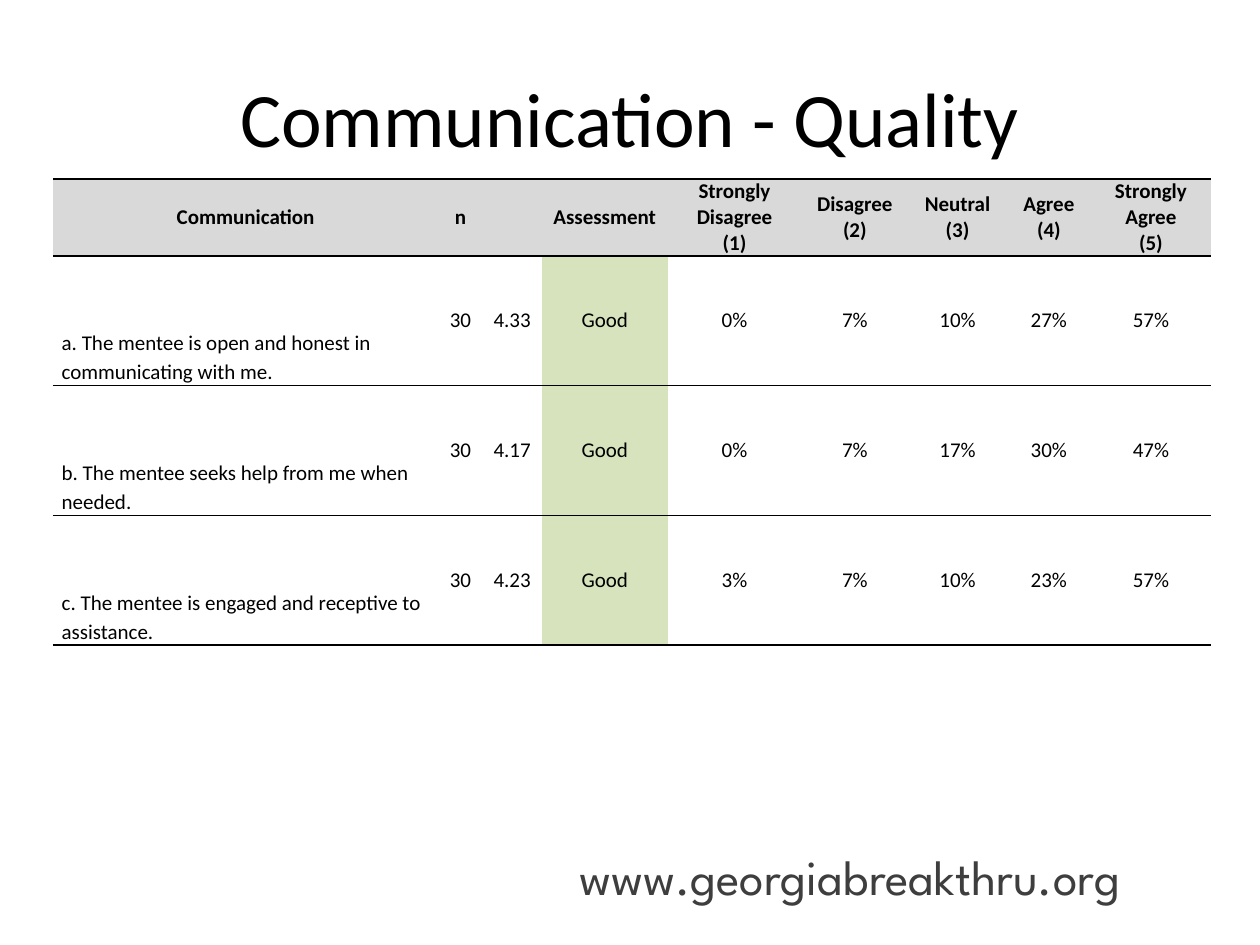
from dataclasses import dataclass

from lxml import etree
from pptx import Presentation
from pptx import util as u
from pptx.dml.color import RGBColor
from pptx.enum import text
from pptx.oxml import ns
from pptx.slide import Slide
from pptx.table import Table, _Cell
from pptx.text.text import TextFrame

BLACK = RGBColor(0x00, 0x00, 0x00)
WEB_GREY = RGBColor(0x3E, 0x3E, 0x3E)
HEADER_GREY = RGBColor(0xD9, 0xD9, 0xD9)
GOOD_GREEN = RGBColor(0xD6, 0xE3, 0xBC)
ASSESSMENT_COLUMN = 3


@dataclass(frozen=True)
class Column:
    heading: str
    width: float


@dataclass(frozen=True)
class Statement:
    wording: str
    count: int
    mean: float
    rating: str
    shares: tuple[int, ...]

    def values(self) -> list[str]:
        percentages = [f"{share}%" for share in self.shares]
        return [self.wording, str(self.count), f"{self.mean:.2f}", self.rating, *percentages]


COLUMNS = [
    Column("Communication", 3.06),
    Column("n", 0.35),
    Column("", 0.47),
    Column("Assessment", 1),
    Column("Strongly Disagree\n(1)", 1.06),
    Column("Disagree (2)", 0.85),
    Column("Neutral (3)", 0.78),
    Column("Agree (4)", 0.67),
    Column("Strongly Agree\n(5)", 0.95),
]
STATEMENTS = [
    Statement("a. The mentee is open and honest in communicating with me.",
              30, 4.33, "Good", (0, 7, 10, 27, 57)),
    Statement("b. The mentee seeks help from me when needed.",
              30, 4.17, "Good", (0, 7, 17, 30, 47)),
    Statement("c. The mentee is engaged and receptive to assistance.",
              30, 4.23, "Good", (3, 7, 10, 23, 57)),
]
HEADER_HEIGHT = 0.44
ROW_HEIGHT = 1.03


def write_text(frame: TextFrame, wording: str, *, size: float = 12, font: str = "Calibri",
               color: RGBColor = BLACK, bold: bool = False,
               align: text.PP_ALIGN = text.PP_ALIGN.CENTER,
               line_spacing: float = 1.0) -> None:
    for index, line in enumerate(wording.split("\n")):
        para = frame.add_paragraph() if index else frame.paragraphs[0]
        para.alignment = align
        para.line_spacing = line_spacing
        span = para.add_run()
        span.text = line
        span.font.size = u.Pt(size)
        span.font.name = font
        span.font.bold = bold
        span.font.color.rgb = color


def rule_cell(cell: _Cell) -> None:
    properties = cell._tc.get_or_add_tcPr()
    for side in ("lnL", "lnR"):
        line = etree.SubElement(properties, ns.qn(f"a:{side}"), w="0")
        etree.SubElement(line, ns.qn("a:noFill"))
    for side in ("lnT", "lnB"):
        line = etree.SubElement(properties, ns.qn(f"a:{side}"), w=str(u.Pt(1)))
        fill = etree.SubElement(line, ns.qn("a:solidFill"))
        etree.SubElement(fill, ns.qn("a:srgbClr"), val=str(BLACK))


def fill_cell(cell: _Cell, color: RGBColor | None) -> None:
    if color is None:
        cell.fill.background()
    else:
        cell.fill.solid()
        cell.fill.fore_color.rgb = color


def draw_row(table: Table, row: int, values: list[str]) -> None:
    is_header = row == 0
    for column, value in enumerate(values):
        cell = table.cell(row, column)
        is_wording = column == 0 and not is_header
        cell.margin_left = cell.margin_right = u.Inches(0.07)
        cell.margin_top = cell.margin_bottom = 0
        cell.vertical_anchor = text.MSO_ANCHOR.BOTTOM if is_wording else text.MSO_ANCHOR.MIDDLE
        rule_cell(cell)
        body_fill = GOOD_GREEN if column == ASSESSMENT_COLUMN else None
        fill_cell(cell, HEADER_GREY if is_header else body_fill)
        if value:
            write_text(cell.text_frame, value, bold=is_header,
                       align=text.PP_ALIGN.LEFT if is_wording else text.PP_ALIGN.CENTER,
                       line_spacing=1.15 if is_wording else 1.0)


def draw_table(page: Slide) -> None:
    width = sum(column.width for column in COLUMNS)
    height = HEADER_HEIGHT + ROW_HEIGHT * len(STATEMENTS)
    table = page.shapes.add_table(
        len(STATEMENTS) + 1, len(COLUMNS),
        u.Inches(0.42), u.Inches(1.42), u.Inches(width), u.Inches(height)).table
    table.first_row = table.horz_banding = False
    for index, column in enumerate(COLUMNS):
        table.columns[index].width = u.Inches(column.width)
    contents = [[column.heading for column in COLUMNS], *(s.values() for s in STATEMENTS)]
    for index, values in enumerate(contents):
        table.rows[index].height = u.Inches(ROW_HEIGHT if index else HEADER_HEIGHT)
        draw_row(table, index, values)


def main() -> None:
    deck = Presentation()
    deck.slide_width, deck.slide_height = u.Inches(10), u.Inches(7.5)
    page = deck.slides.add_slide(deck.slide_layouts[5])

    title = page.shapes.title
    title.left, title.top = u.Inches(0.5), u.Inches(0.3)
    title.width, title.height = u.Inches(9), u.Inches(1.25)
    title.text_frame.vertical_anchor = text.MSO_ANCHOR.MIDDLE
    write_text(title.text_frame, "Communication - Quality", size=44)

    draw_table(page)

    box = page.shapes.add_textbox(u.Inches(4.5), u.Inches(6.67), u.Inches(5.33), u.Inches(0.4))
    box.text_frame.word_wrap = True
    write_text(box.text_frame, "www.georgiabreakthru.org", size=28, font="League Spartan",
               color=WEB_GREY, align=text.PP_ALIGN.LEFT)

    deck.save("out.pptx")


if __name__ == "__main__":
    main()
